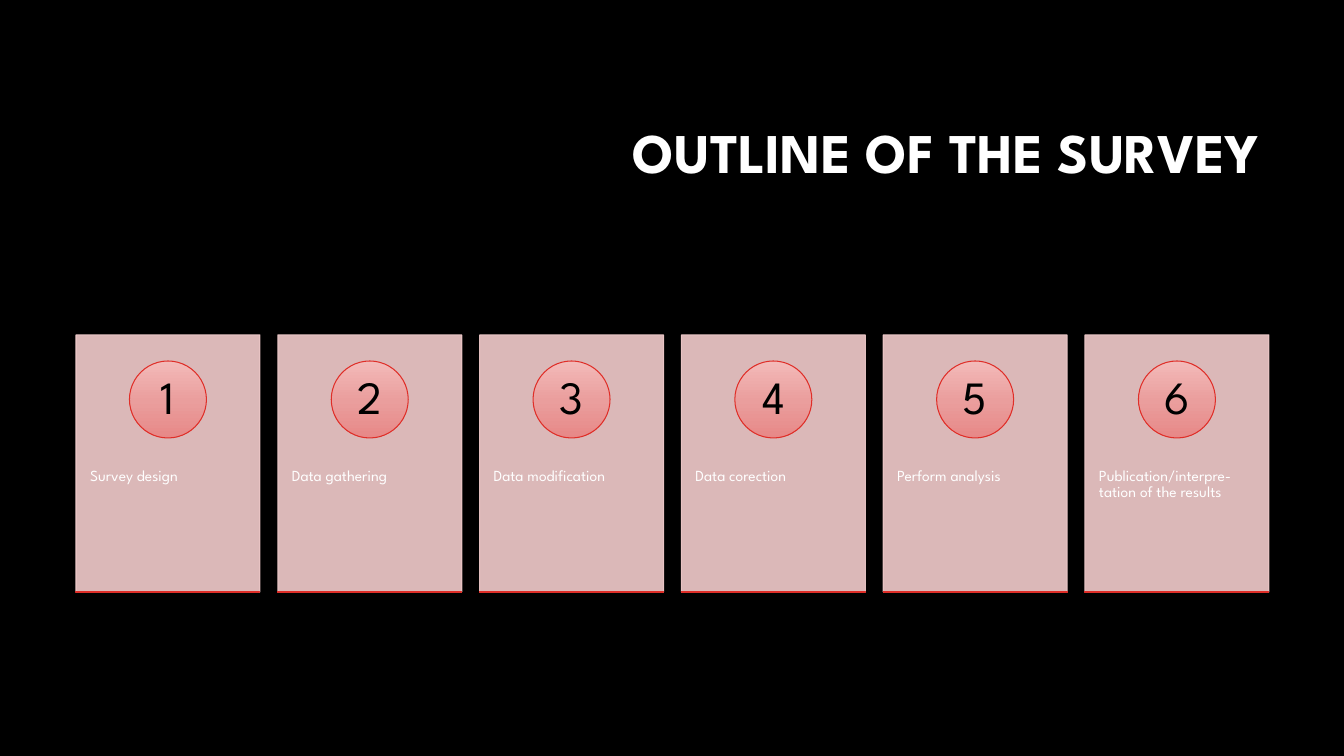
import copy
import pptx
import pptx.dml.color
import pptx.enum.shapes
import pptx.enum.text
import pptx.oxml
import pptx.oxml.ns
import pptx.util

PX = 914400 / 100.8
SHAPE = pptx.enum.shapes.MSO_SHAPE
ALIGN = pptx.enum.text.PP_ALIGN
ANCHOR = pptx.enum.text.MSO_ANCHOR
NO_FIT = pptx.enum.text.MSO_AUTO_SIZE.NONE


def px(*lengths):
    return [pptx.util.Emu(round(n * PX)) for n in lengths]


def rgb(value):
    return pptx.dml.color.RGBColor.from_string(value)


prs = pptx.Presentation()
prs.slide_width, prs.slide_height = px(1344, 756)
slide = prs.slides.add_slide(prs.slide_layouts[5])
slide.background.fill.solid()
slide.background.fill.fore_color.rgb = rgb("000000")

title = slide.shapes.title
title.left, title.top, title.width, title.height = px(319, 84, 950, 142)
title.text_frame.text = "OUTLINE OF THE SURVEY"
title.text_frame.auto_size = NO_FIT
title.text_frame.vertical_anchor = ANCHOR.MIDDLE
texts = [(title, 40, "FFFFFF", ALIGN.RIGHT)]

steps = [
    "Survey design",
    "Data gathering",
    "Data modification",
    "Data corection",
    "Perform analysis",
    "Publication/interpre-tation of the results",
]
stops = [(0, "F3BAB9"), (0.52, "EA9E9D"), (1, "E78887")]
row_left, row_right = 76, 1269
card_top, card_width, card_height = 335, 184, 257
pitch = (row_right - row_left - card_width) / (len(steps) - 1)
circle_size = 77

for i, step in enumerate(steps):
    left = row_left + i * pitch

    card = slide.shapes.add_shape(SHAPE.RECTANGLE, *px(left, card_top, card_width, card_height))
    card.shadow.inherit = False
    card.fill.solid()
    card.fill.fore_color.rgb = rgb("F3CDCD")
    card.line.color.rgb = rgb("F3CDCD")
    card.line.width = pptx.util.Pt(0.75)
    for clr in card._element.xpath(".//p:spPr//a:srgbClr"):
        alpha = pptx.oxml.parse_xml("<a:alpha %s val='90000'/>" % pptx.oxml.ns.nsdecls("a"))
        clr.append(alpha)

    label = slide.shapes.add_textbox(*px(left, 432, card_width, 154))
    tf = label.text_frame
    tf.word_wrap = True
    tf.auto_size = NO_FIT
    tf.vertical_anchor = ANCHOR.TOP
    tf.margin_left, tf.margin_top, tf.margin_right, tf.margin_bottom = px(14, 36, 14, 36)
    tf.text = step
    texts.append((label, 11, "FFFFFF", ALIGN.LEFT))

    circle_left = left + (card_width - circle_size) / 2
    circle = slide.shapes.add_shape(SHAPE.OVAL, *px(circle_left, 361, circle_size, circle_size))
    tf = circle.text_frame
    tf.margin_left, tf.margin_top, tf.margin_right, tf.margin_bottom = px(6, 1, 6, 1)
    tf.vertical_anchor = ANCHOR.MIDDLE
    tf.text = str(i + 1)
    texts.append((circle, 33, "000000", ALIGN.CENTER))

    rule = slide.shapes.add_shape(
        SHAPE.RECTANGLE, *px(left, card_top + card_height, card_width, 1))

    for sp in (circle, rule):
        sp.shadow.inherit = False
        sp.fill.gradient()
        sp.fill.gradient_angle = 270
        first = sp._element.xpath(".//a:gs")[0]
        first.addnext(copy.deepcopy(first))
        for stop, (position, color) in zip(sp.fill.gradient_stops, stops):
            stop.position = position
            stop.color.rgb = rgb(color)
        sp.line.color.rgb = rgb("DF2E28")
        sp.line.width = pptx.util.Pt(0.75)

for sp, size, color, align in texts:
    p = sp.text_frame.paragraphs[0]
    p.alignment = align
    p.line_spacing = 0.9
    r = p.runs[0]
    r.font.name = "League Spartan"
    r.font.size = pptx.util.Pt(size)
    r.font.bold = sp is title
    r.font.color.rgb = rgb(color)

prs.save("out.pptx")
